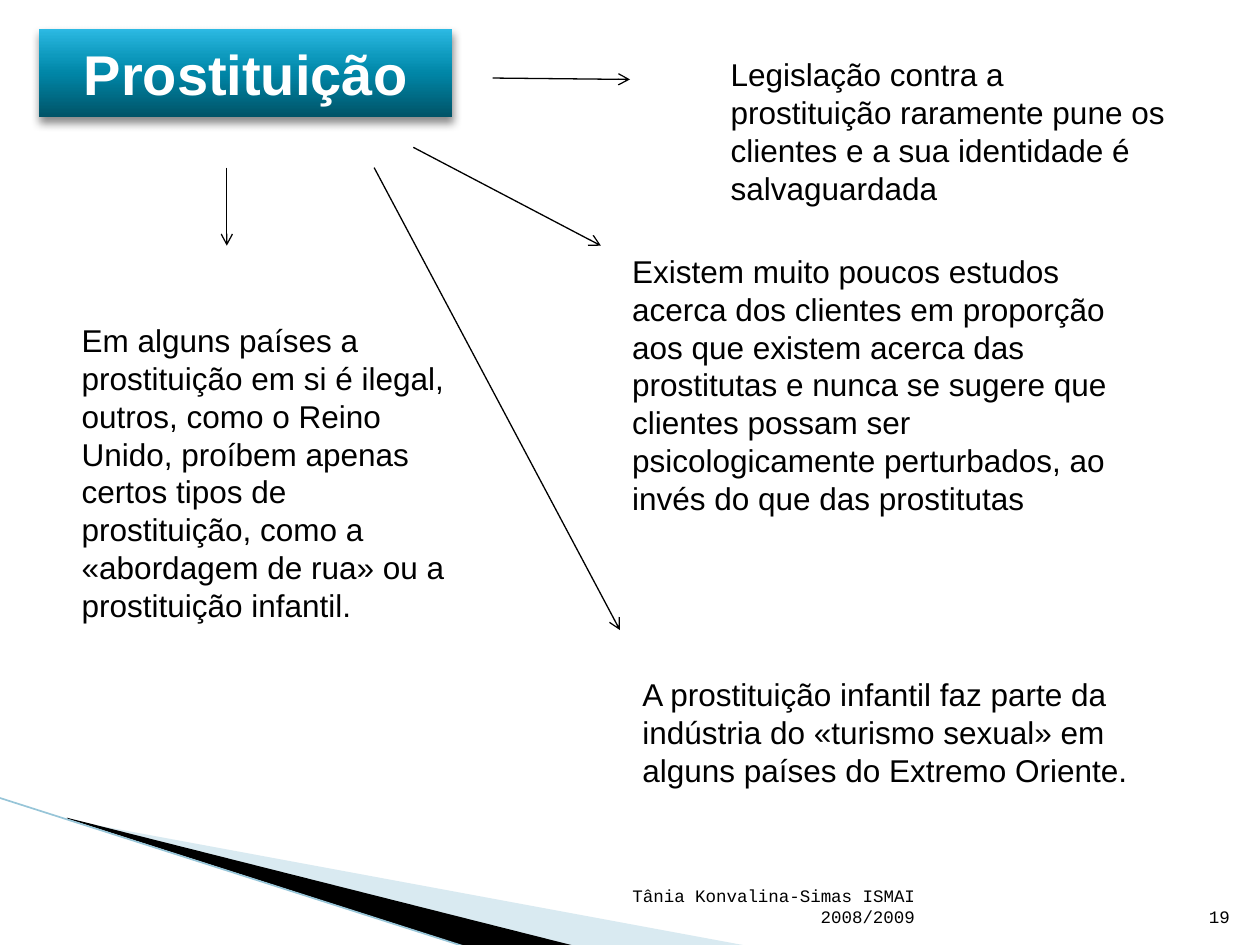
from typing import NamedTuple

from lxml import etree
from pptx import Presentation
from pptx.dml.color import RGBColor
from pptx.enum.shapes import MSO_CONNECTOR, MSO_SHAPE
from pptx.enum.text import MSO_ANCHOR, MSO_AUTO_SIZE, PP_ALIGN
from pptx.oxml import parse_xml
from pptx.oxml.ns import nsdecls, qn
from pptx.util import Pt

STRAIGHT = MSO_CONNECTOR.STRAIGHT
RECTANGLE = MSO_SHAPE.RECTANGLE
MIDDLE, BOTTOM, TOP = MSO_ANCHOR.MIDDLE, MSO_ANCHOR.BOTTOM, MSO_ANCHOR.TOP
LEFT, CENTER, RIGHT = PP_ALIGN.LEFT, PP_ALIGN.CENTER, PP_ALIGN.RIGHT
GROW, FIXED = MSO_AUTO_SIZE.SHAPE_TO_FIT_TEXT, MSO_AUTO_SIZE.NONE

BLACK = RGBColor(0x00, 0x00, 0x00)
WHITE = RGBColor(0xFF, 0xFF, 0xFF)
PALE_BLUE = RGBColor(0xA0, 0xCB, 0xDC)
EDGE_BLUE = RGBColor(0x97, 0xC5, 0xD8)
TITLE_GRADIENT = (
    (0, RGBColor(0x00, 0x53, 0x67)),
    (50, RGBColor(0x00, 0x86, 0xA7)),
    (70, RGBColor(0x0E, 0x9A, 0xBE)),
    (100, RGBColor(0x2C, 0xB9, 0xE3)),
)


class Wedge(NamedTuple):
    points: tuple
    color: RGBColor
    opacity: int


class Line(NamedTuple):
    start: tuple
    end: tuple
    color: RGBColor = BLACK
    width: float = 0.75
    arrow: bool = True


class Note(NamedTuple):
    text: str
    left: float
    top: float
    width: float
    height: float
    size: int = 18
    font: str = "Arial"
    align: PP_ALIGN = LEFT
    anchor: MSO_ANCHOR = TOP
    fit: MSO_AUTO_SIZE = GROW


WEDGES = (
    Wedge(((39.6, 468.7), (428.4, 540.7), (328.3, 540.7), (39.6, 468)), PALE_BLUE, 40),
    Wedge(((38.2, 467.3), (329, 540.7), (267.8, 541.4), (38.9, 468)), BLACK, 100),
)
WEDGE_EDGE = Line((-0.7, 455.8), (267.1, 541.4), EDGE_BLUE, 0.95, False)
ARROWS = (
    Line((281.5, 44.6), (360, 45.4)),
    Line((236.2, 84.2), (343.4, 140.4)),
    Line((129.6, 95.8), (129.6, 140.4)),
    Line((213.8, 95.8), (354.2, 360)),
)
NOTES = (
    Note("Legislação contra a prostituição raramente pune os clientes e a sua "
         "identidade é salvaguardada", 410.4, 28.1, 264.2, 94.3),
    Note("Existem muito poucos estudos acerca dos clientes em proporção aos que "
         "existem acerca das prostitutas e nunca se sugere que clientes possam ser "
         "psicologicamente perturbados, ao invés do que das prostitutas",
         354.2, 140.4, 309.6, 159.8),
    Note("Em alguns países a prostituição em si é ilegal, outros, como o Reino "
         "Unido, proíbem apenas certos tipos de prostituição, como a «abordagem "
         "de rua» ou a prostituição infantil.", 39.6, 180, 224.6, 181.4),
    Note("A prostituição infantil faz parte da indústria do «turismo sexual» em "
         "alguns países do Extremo Oriente.", 360, 382.3, 303.8, 72.7),
    Note("19", 681.1, 504.7, 28.8, 28.8, 10, "Courier New", RIGHT, BOTTOM, FIXED),
    Note("Tânia Konvalina-Simas ISMAI 2008/2009",
         344.9, 504.7, 185, 28.8, 10, "Courier New", RIGHT, BOTTOM, FIXED),
)


def draw_wedge(shapes, wedge: Wedge) -> None:
    first, *others = [(Pt(x), Pt(y)) for x, y in wedge.points]
    builder = shapes.build_freeform(*first)
    builder.add_line_segments(others, close=True)
    outline = builder.convert_to_shape()
    outline.shadow.inherit = False
    outline.fill.solid()
    outline.fill.fore_color.rgb = wedge.color
    outline.line.fill.background()
    if wedge.opacity < 100:
        color = outline.fill._xPr.find(".//" + qn("a:srgbClr"))
        etree.SubElement(color, qn("a:alpha"), val=str(wedge.opacity * 1000))


def draw_line(shapes, line: Line) -> None:
    connector = shapes.add_connector(STRAIGHT, *map(Pt, line.start + line.end))
    connector.line.color.rgb = line.color
    connector.line.width = Pt(line.width)
    if line.arrow:
        etree.SubElement(connector.line._get_or_add_ln(), qn("a:tailEnd"), type="arrow")
    etree.SubElement(connector._element.spPr, qn("a:effectLst"))


def draw_note(shapes, note: Note) -> None:
    box = shapes.add_textbox(*map(Pt, (note.left, note.top, note.width, note.height)))
    frame = box.text_frame
    frame.word_wrap = True
    frame.auto_size = note.fit
    frame.vertical_anchor = note.anchor
    paragraph = frame.paragraphs[0]
    paragraph.text = note.text
    paragraph.alignment = note.align
    paragraph.font.name = note.font
    paragraph.font.size = Pt(note.size)
    paragraph.font.color.rgb = BLACK


def draw_title(shapes, text: str) -> None:
    banner = shapes.add_shape(RECTANGLE, Pt(22.3), Pt(16.6), Pt(236.2), Pt(50.4))
    banner.line.fill.background()
    # Gradient rising from the dark foot, and a soft shadow below
    stops = "".join(
        f'<a:gs pos="{place * 1000}"><a:srgbClr val="{color}"/></a:gs>'
        for place, color in TITLE_GRADIENT
    )
    gradient = parse_xml(
        f'<a:gradFill {nsdecls("a")} rotWithShape="1"><a:gsLst>{stops}</a:gsLst>'
        '<a:lin ang="16200000" scaled="0"/></a:gradFill>'
    )
    shadow = parse_xml(
        f'<a:effectLst {nsdecls("a")}><a:outerShdw blurRad="{Pt(5)}" dist="{Pt(3)}" '
        'dir="5400000" rotWithShape="0"><a:srgbClr val="000000">'
        '<a:alpha val="45000"/></a:srgbClr></a:outerShdw></a:effectLst>'
    )
    properties = banner._element.spPr
    properties.find(qn("a:prstGeom")).addnext(gradient)
    properties.append(shadow)

    frame = banner.text_frame
    frame.word_wrap = True
    frame.vertical_anchor = MIDDLE
    heading = frame.paragraphs[0]
    heading.text = text
    heading.alignment = CENTER
    heading.font.name = "Arial"
    heading.font.size = Pt(32)
    heading.font.bold = True
    heading.font.color.rgb = WHITE


def main() -> None:
    deck = Presentation()
    deck.slide_width, deck.slide_height = Pt(720), Pt(540)
    shapes = deck.slides.add_slide(deck.slide_layouts[6]).shapes

    # Corner decoration
    for wedge in WEDGES:
        draw_wedge(shapes, wedge)
    draw_line(shapes, WEDGE_EDGE)

    # Title with arrows leading to its notes, then the footer
    draw_title(shapes, "Prostituição")
    for arrow in ARROWS:
        draw_line(shapes, arrow)
    for note in NOTES:
        draw_note(shapes, note)

    deck.save("out.pptx")


if __name__ == "__main__":
    main()
